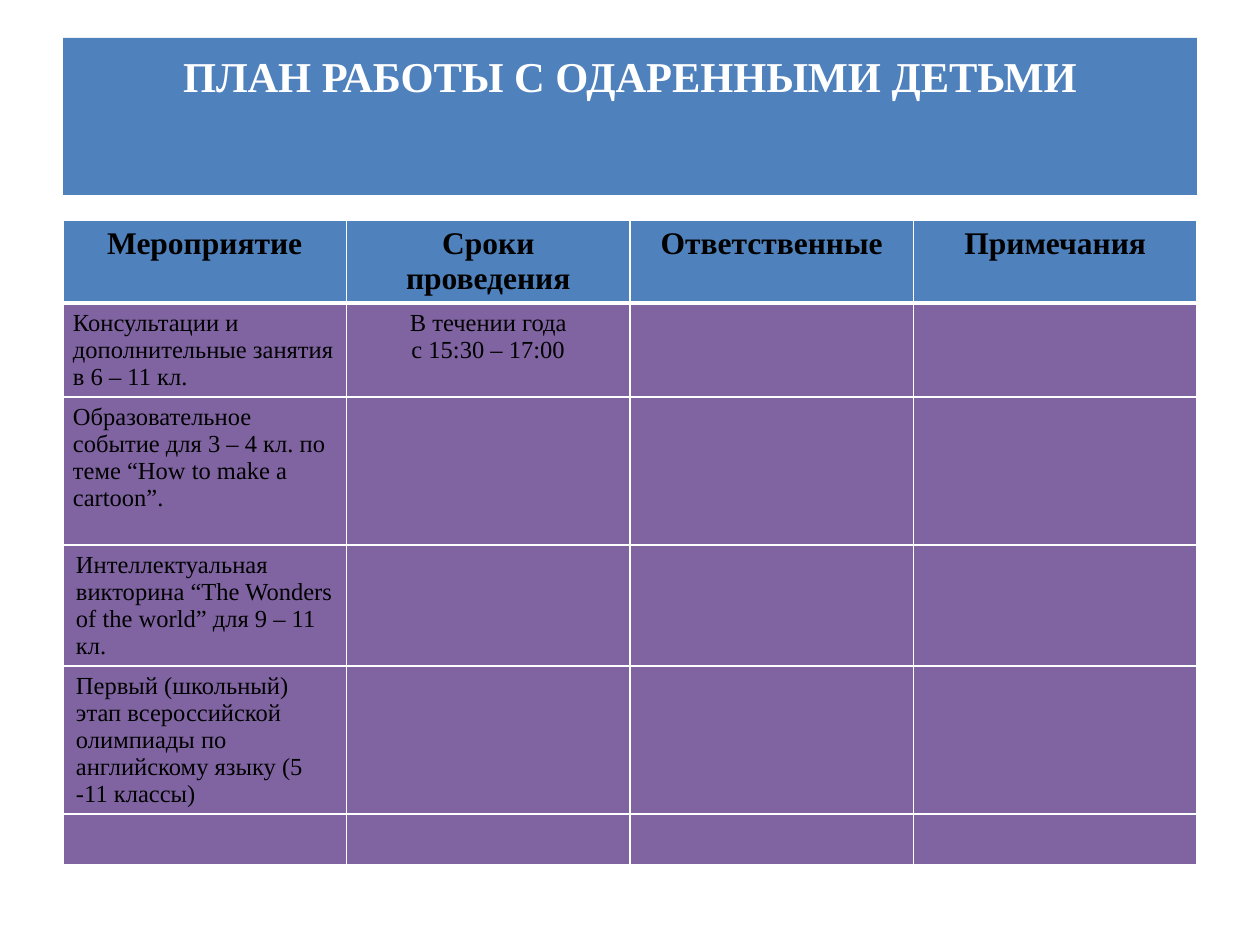
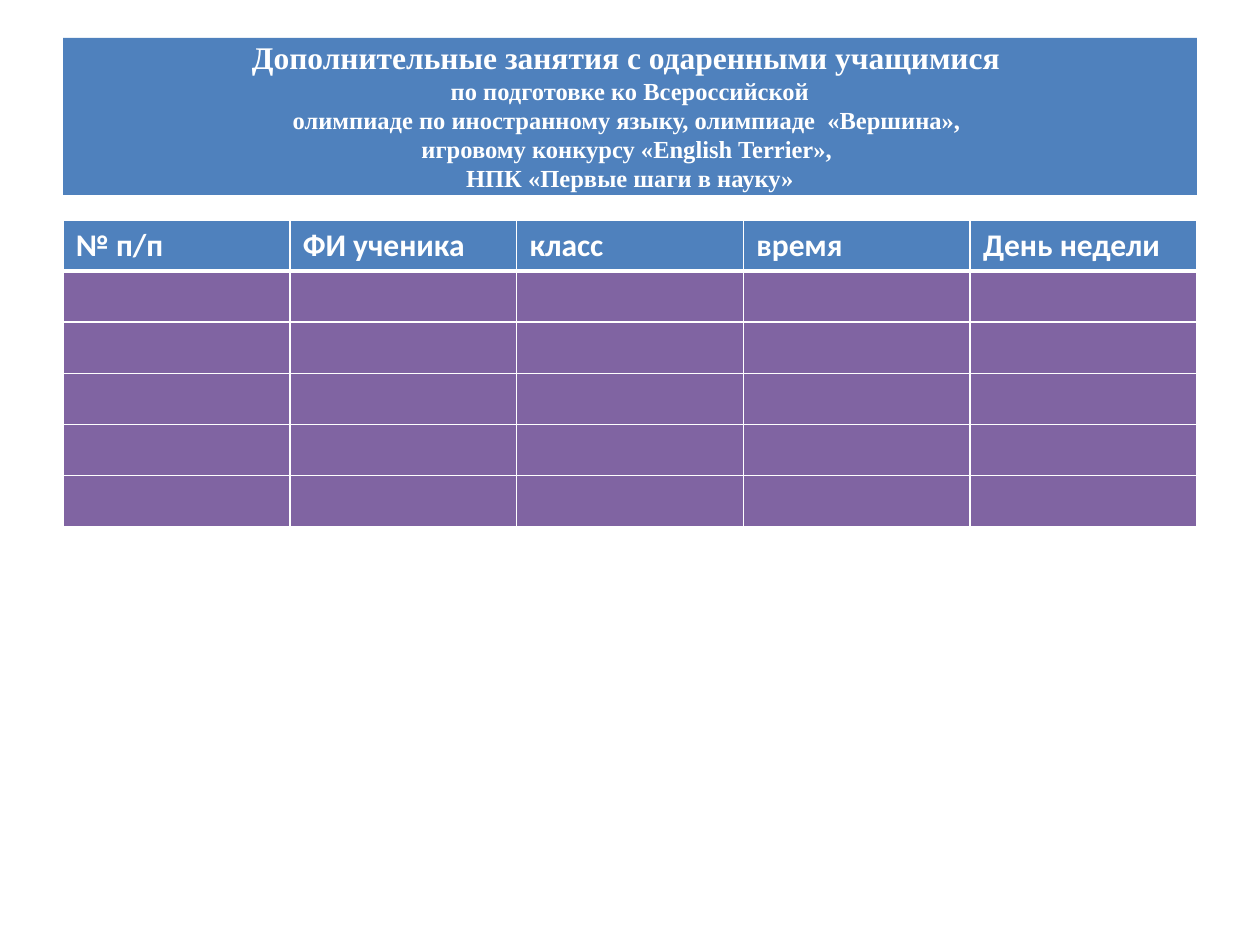
from lxml.etree import SubElement
from pptx import Presentation
from pptx.dml.color import RGBColor
from pptx.enum.text import MSO_ANCHOR as Anchor, MSO_AUTO_SIZE as AutoSize, PP_ALIGN as Align
from pptx.oxml.ns import qn
from pptx.util import Pt

EMU_PER_PX = 914400 / 126
COLORS = {"band": "4F81BD", "body": "8064A2", "white": "FFFFFF", "black": "000000"}
SERIF, SANS = "Times New Roman", "Calibri"
TITLE_BOX = (63, 38, 1134, 157)
TABLE_BOX = (63, 220, 1134)
NARROW, WIDE = 10, 13

PLAN_TITLE = [("ПЛАН РАБОТЫ С ОДАРЕННЫМИ ДЕТЬМИ", 24.3, None)]
PLAN_ROWS = [
    ["Мероприятие", "Сроки проведения", "Ответственные", "Примечания"],
    ["Консультации и дополнительные занятия в 6 – 11 кл.", "В течении года\nс 15:30 – 17:00", "", ""],
    ["Образовательное событие для 3 – 4 кл. по теме “How to make a cartoon”.", "", "", ""],
    ["Интеллектуальная викторина “The Wonders of the world” для 9 – 11 кл.", "", "", ""],
    ["Первый (школьный) этап всероссийской  олимпиады по английскому языку (5 -11 классы)", "", "", ""],
    [""] * 4,
]
PLAN_HEIGHTS = [83, 94, 148, 121, 148, 50]

LESSONS_TITLE = [("Дополнительные занятия с одаренными учащимися ", 18, None)] + [
    (line, 14, 16.7) for line in (
        "по подготовке ко Всероссийской",
        "олимпиаде по иностранному языку, олимпиаде  «Вершина», ",
        "игровому конкурсу «English Terrier», ",
        "НПК «Первые шаги в науку»",
    )
]
LESSONS_ROWS = [["№ п/п", "ФИ ученика", "класс", "время", "День недели"]] + [[""] * 5] * 5
LESSONS_HEIGHTS = [51] * 6


def px(length):
    """Turn px into EMU."""
    return round(length * EMU_PER_PX)


def rgb(name):
    """Look up a named colour."""
    return RGBColor.from_string(COLORS[name])


def paint(item, color):
    """Fill a shape or a cell with a named colour."""
    item.fill.solid()
    item.fill.fore_color.rgb = rgb(color)


def set_font(font, color, **values):
    """Apply a colour and format values to a font."""
    font.color.rgb = rgb(color)
    for name, value in values.items():
        setattr(font, name, value)


def set_borders(cell, bottom):
    """Draw white lines of 1 pt round a cell, with its own bottom width."""
    properties = cell._tc.get_or_add_tcPr()
    for side, width in (("L", 1), ("R", 1), ("T", 1), ("B", bottom)):
        line = SubElement(properties, qn(f"a:ln{side}"), w=str(Pt(width)))
        fill = SubElement(line, qn("a:solidFill"))
        SubElement(fill, qn("a:srgbClr"), val=COLORS["white"])


def add_title(page, box, lines, top_inset):
    """Place the title band and its centred lines."""
    title = page.shapes.title
    title.left, title.top, title.width, title.height = map(px, box)
    paint(title, "band")
    frame = title.text_frame
    settings = {"auto_size": AutoSize.NONE, "word_wrap": True, "vertical_anchor": Anchor.TOP,
                "margin_top": px(top_inset), "margin_bottom": 0}
    for name, value in settings.items():
        setattr(frame, name, value)
    frame.text = "\n".join(text for text, _, _ in lines)
    for para, (_, size, spacing) in zip(frame.paragraphs, lines):
        para.alignment = Align.CENTER
        if spacing:
            para.line_spacing = Pt(spacing)
        set_font(para.runs[0].font, "white", name=SERIF, size=Pt(size), bold=True)


def fill_cell(cell, text, is_header, color, font_name, align, inset):
    """Write and format one table cell."""
    cell.margin_left = cell.margin_right = px(inset)
    set_borders(cell, 3 if is_header else 1)
    paint(cell, "band" if is_header else "body")
    cell.text = text
    for para in cell.text_frame.paragraphs:
        para.alignment = align
        for span in para.runs:
            set_font(span.font, color, name=font_name, size=Pt(18 if is_header else 14), bold=is_header)


def add_grid(page, box, rows, heights, header_color, font_name, header_align, inset_of):
    """Place a table of equal columns below the title band."""
    left, top, width = box
    columns = len(rows[0])
    table = page.shapes.add_table(
        len(rows), columns, px(left), px(top), px(width), px(sum(heights))).table
    for column in table.columns:
        column.width = px(width / columns)
    for row_index, (texts, height) in enumerate(zip(rows, heights)):
        table.rows[row_index].height = px(height)
        is_header = row_index == 0
        for column_index, text in enumerate(texts):
            align = header_align if is_header else Align.CENTER if column_index else Align.LEFT
            fill_cell(table.cell(row_index, column_index), text, is_header,
                      header_color if is_header else "black", font_name, align, inset_of(row_index))


def add_plan(page):
    """Build the plan of work with gifted children."""
    add_title(page, TITLE_BOX, PLAN_TITLE, 12)
    add_grid(page, TABLE_BOX, PLAN_ROWS, PLAN_HEIGHTS, "black", SERIF, Align.CENTER,
             lambda row: NARROW if row < 3 else WIDE)


def add_lessons(page):
    """Build the timetable of extra lessons."""
    add_title(page, TITLE_BOX, LESSONS_TITLE, 0)
    add_grid(page, TABLE_BOX, LESSONS_ROWS, LESSONS_HEIGHTS, "white", SANS, Align.LEFT,
             lambda row: WIDE)


def main():
    """Build and save the deck."""
    deck = Presentation()
    deck.slide_width, deck.slide_height = px(1260), px(945)
    for build in (add_plan, add_lessons):
        build(deck.slides.add_slide(deck.slide_layouts[5]))
    deck.save("out.pptx")


if __name__ == "__main__":
    main()
